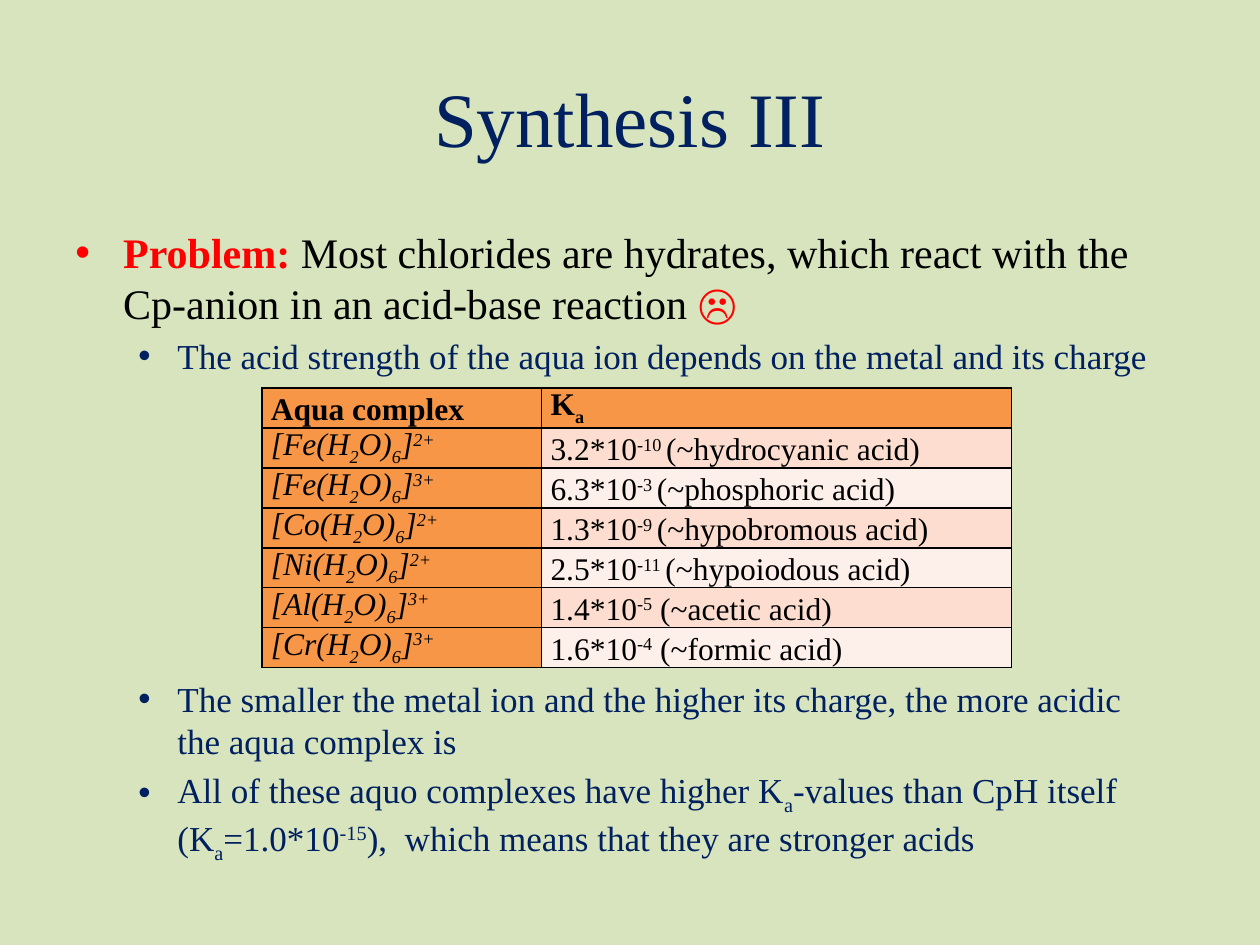
from lxml.etree import SubElement
from pptx import Presentation
from pptx.dml.color import RGBColor
from pptx.enum.text import MSO_ANCHOR, PP_ALIGN
from pptx.oxml import parse_xml
from pptx.oxml.ns import nsdecls, qn
from pptx.util import Inches, Pt

FONT = "Times New Roman"
NAVY = RGBColor(0x00, 0x20, 0x60)
RED = RGBColor(0xFF, 0x00, 0x00)
BLACK = RGBColor(0x00, 0x00, 0x00)
GREEN = RGBColor(0xD7, 0xE4, 0xBD)
ORANGE = RGBColor(0xF7, 0x96, 0x46)
BANDS = RGBColor(0xFC, 0xDD, 0xCF), RGBColor(0xFD, 0xEF, 0xE9)

# Content: "|" separates pieces, "_" starts a subscript, "^" a superscript
TITLE = "Synthesis III"
PROBLEM = [
    ("Problem:", dict(color=RED, bold=True)),
    (" Most chlorides are hydrates, which react with the\v"
     "Cp-anion in an acid-base reaction ", dict(color=BLACK)),
    ("☹", dict(color=RED)),
]
POINTS = [  # text, space before in points (the second leaves room for the table)
    ("The acid strength of the aqua ion depends on the metal and its charge", 4),
    ("The smaller the metal ion and the higher its charge, the more acidic\v"
     "the aqua complex is", 172),
    ("All of these aquo complexes have higher K|_a|-values than CpH itself "
     "(K|_a|=1.0*10|^-15|),  which means that they are stronger acids", 4),
]
HEADER = ("Aqua complex", "K|_a")
ACIDS = [  # metal, charge, Ka and similar acid
    ("Fe", "2+", "3.2*10|^-10 |(~hydrocyanic acid)"),
    ("Fe", "3+", "6.3*10|^-3 |(~phosphoric acid)"),
    ("Co", "2+", "1.3*10|^-9 |(~hypobromous acid)"),
    ("Ni", "2+", "2.5*10|^-11 |(~hypoiodous acid)"),
    ("Al", "3+", "1.4*10|^-5| (~acetic acid)"),
    ("Cr", "3+", "1.6*10|^-4| (~formic acid)"),
]
COL_WIDTHS = (2.22, 3.73)
TABLE_HEIGHT = 2.22
CELL_LINE = 22.5  # points; keeps subscripts from stretching the rows


def write(p, text, size=20, color=NAVY, bold=False, italic=False):
    """Add text to a paragraph, turning marked pieces into sub- and superscripts."""
    for piece in text.split("|"):
        shift = {"_": "-25000", "^": "30000"}.get(piece[0])
        for i, line in enumerate((piece[1:] if shift else piece).split("\v")):
            if i:
                p.add_line_break()
            r = p.add_run()
            r.text = line
            f = r.font
            f.name, f.size, f.bold, f.italic = FONT, Pt(size), bold, italic
            f.color.rgb = color
            if shift:
                r._r.get_or_add_rPr().set("baseline", shift)


def bullet(p, indent, hanging, before):
    p.space_before = Pt(before)
    pPr = p._p.get_or_add_pPr()
    pPr.set("marL", str(Inches(indent)))
    pPr.set("indent", str(-Inches(hanging)))
    SubElement(pPr, qn("a:buFont")).set("typeface", "Arial")
    SubElement(pPr, qn("a:buChar")).set("char", "•")


def fill_cell(cell, text, fill, **fmt):
    cell.margin_left = cell.margin_right = Inches(0.07)
    cell.margin_top = cell.margin_bottom = 0
    cell.fill.solid()
    cell.fill.fore_color.rgb = fill
    p = cell.text_frame.paragraphs[0]
    p.line_spacing = Pt(CELL_LINE)
    write(p, text, size=18, color=BLACK, **fmt)
    for i, side in enumerate("LRTB"):
        cell._tc.get_or_add_tcPr().insert(i, parse_xml(
            f'<a:ln{side} {nsdecls("a")} w="12700"><a:solidFill>'
            f'<a:srgbClr val="{BLACK}"/></a:solidFill></a:ln{side}>'))


prs = Presentation()
prs.slide_width, prs.slide_height = Inches(10), Inches(7.5)
s = prs.slides.add_slide(prs.slide_layouts[5])
s.background.fill.solid()
s.background.fill.fore_color.rgb = GREEN

# Title
title = s.shapes.title
title.left, title.top, title.width, title.height = map(Inches, (0.5, 0.3, 9, 1.25))
tf = title.text_frame
tf.vertical_anchor = MSO_ANCHOR.MIDDLE
tf.paragraphs[0].alignment = PP_ALIGN.CENTER
write(tf.paragraphs[0], TITLE, size=44)

# Bulleted text above and below the table
tf = s.shapes.add_textbox(*map(Inches, (0.5, 1.75, 9.17, 5.17))).text_frame
tf.word_wrap = True
p = tf.paragraphs[0]
bullet(p, 0.38, 0.38, 4.8)
for text, fmt in PROBLEM:
    write(p, text, size=24, **fmt)
for text, before in POINTS:
    p = tf.add_paragraph()
    bullet(p, 0.81, 0.31, before)
    write(p, text)

# Acidity table
n_rows = len(ACIDS) + 1
table = s.shapes.add_table(n_rows, 2, Inches(2.08), Inches(3.08),
                           Inches(sum(COL_WIDTHS)), Inches(TABLE_HEIGHT)).table
table.first_row = table.horz_banding = False
for col, width in zip(table.columns, COL_WIDTHS):
    col.width = Inches(width)
for row in table.rows:
    row.height = Inches(TABLE_HEIGHT / n_rows)
for c, text in enumerate(HEADER):
    fill_cell(table.cell(0, c), text, ORANGE, bold=True)
for r, (metal, charge, acidity) in enumerate(ACIDS, 1):
    fill_cell(table.cell(r, 0), f"[{metal}(H|_2|O)|_6|]|^{charge}", ORANGE, italic=True)
    fill_cell(table.cell(r, 1), acidity, BANDS[(r - 1) % 2])

prs.save("out.pptx")
